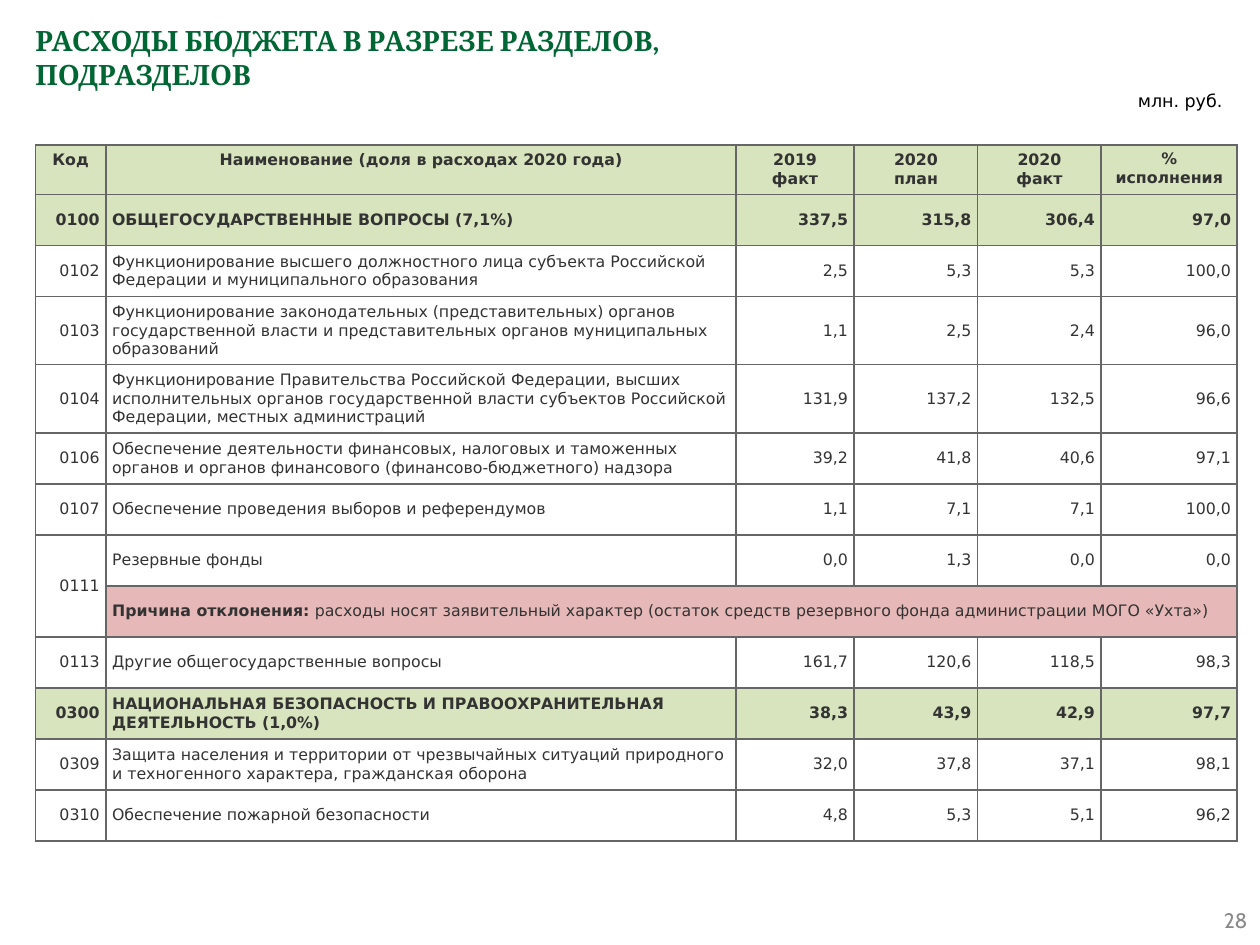
from lxml.etree import SubElement
from pptx import Presentation
from pptx.dml.color import RGBColor
from pptx.enum.shapes import MSO_SHAPE
from pptx.enum.text import MSO_ANCHOR as ANCHOR, MSO_AUTO_SIZE, PP_ALIGN as ALIGN
from pptx.oxml.ns import qn
from pptx.util import Inches, Pt

# Content
TITLE = "РАСХОДЫ БЮДЖЕТА В РАЗРЕЗЕ РАЗДЕЛОВ, ПОДРАЗДЕЛОВ"
UNITS = "млн. руб."
PAGE_NUMBER = "28"
HEADINGS = [
    ["Код"], ["Наименование (доля в расходах 2020 года)"],
    ["2019", "факт"], ["2020", "план"], ["2020", "факт"], ["%", "исполнения"],
]
EXPENSES = [
    ("0100", "ОБЩЕГОСУДАРСТВЕННЫЕ ВОПРОСЫ (7,1%)", "337,5", "315,8", "306,4", "97,0"),
    ("0102", "Функционирование высшего должностного лица субъекта Российской "
     "Федерации и муниципального образования", "2,5", "5,3", "5,3", "100,0"),
    ("0103", "Функционирование законодательных (представительных) органов "
     "государственной власти и представительных органов муниципальных "
     "образований", "1,1", "2,5", "2,4", "96,0"),
    ("0104", "Функционирование Правительства Российской Федерации, высших "
     "исполнительных органов государственной власти субъектов Российской "
     "Федерации, местных администраций", "131,9", "137,2", "132,5", "96,6"),
    ("0106", "Обеспечение деятельности финансовых, налоговых и таможенных "
     "органов и органов финансового (финансово-бюджетного) надзора",
     "39,2", "41,8", "40,6", "97,1"),
    ("0107", "Обеспечение проведения выборов и референдумов",
     "1,1", "7,1", "7,1", "100,0"),
    ("0111", "Резервные фонды", "0,0", "1,3", "0,0", "0,0"),
    ("0113", "Другие общегосударственные вопросы",
     "161,7", "120,6", "118,5", "98,3"),
    ("0300", "НАЦИОНАЛЬНАЯ БЕЗОПАСНОСТЬ И ПРАВООХРАНИТЕЛЬНАЯ ДЕЯТЕЛЬНОСТЬ (1,0%)",
     "38,3", "43,9", "42,9", "97,7"),
    ("0309", "Защита населения и территории от чрезвычайных ситуаций природного "
     "и техногенного характера, гражданская оборона",
     "32,0", "37,8", "37,1", "98,1"),
    ("0310", "Обеспечение пожарной безопасности", "4,8", "5,3", "5,1", "96,2"),
]
SECTIONS = {"0100", "0300"}
# Explanation placed under an expense line, as (text, bold) runs
REASONS = {
    "0111": [("Причина отклонения: ", True),
             ("расходы носят заявительный характер (остаток средств резервного "
              "фонда администрации МОГО «Ухта»)", False)],
}

# Style
GREEN = RGBColor(0x00, 0x66, 0x33)
INK = RGBColor(0x33, 0x33, 0x33)
BLACK = RGBColor(0x00, 0x00, 0x00)
GREY = RGBColor(0x89, 0x89, 0x89)
BORDER = RGBColor(0x66, 0x66, 0x66)
SECTION_FILL = RGBColor(0xD7, 0xE4, 0xBD)
REASON_FILL = RGBColor(0xE6, 0xB9, 0xB8)
WHITE = RGBColor(0xFF, 0xFF, 0xFF)
SANS = "DejaVu Sans"
COLUMN_WIDTHS = [0.56, 5, 0.94, 0.98, 0.98, 1.08]
HEADER_HEIGHT, BODY_HEIGHT = 0.3, 4.86


def add_run(paragraph, text, size, font, color, bold=False):
    run = paragraph.add_run()
    run.text = text
    run.font.size = Pt(size)
    run.font.name = font
    run.font.color.rgb = color
    run.font.bold = bold


def fill_cell(cell, paragraphs, align, fill, anchor=ANCHOR.MIDDLE, side=0.05, edge=0.05):
    """Write paragraphs of (text, bold) runs and set the cell's look."""
    frame = cell.text_frame
    for index, runs in enumerate(paragraphs):
        paragraph = frame.add_paragraph() if index else frame.paragraphs[0]
        paragraph.alignment = align
        for text, bold in runs:
            add_run(paragraph, text, 9, SANS, INK, bold)
    cell.vertical_anchor = anchor
    cell.margin_left = cell.margin_right = Inches(side)
    cell.margin_top = cell.margin_bottom = Inches(edge)
    cell.fill.solid()
    cell.fill.fore_color.rgb = fill


def add_borders(cell):
    properties = cell._tc.get_or_add_tcPr()
    for position, tag in enumerate(("a:lnL", "a:lnR", "a:lnT", "a:lnB")):
        line = SubElement(properties, qn(tag), w=str(Pt(1)))
        solid = SubElement(line, qn("a:solidFill"))
        SubElement(solid, qn("a:srgbClr"), val=str(BORDER))
        properties.insert(position, line)


def add_title(slide):
    title = slide.shapes.title
    title.left, title.top = Inches(0.18), Inches(0.14)
    title.width, title.height = Inches(6.02), Inches(1.15)
    frame = title.text_frame
    frame.word_wrap = True
    frame.auto_size = MSO_AUTO_SIZE.NONE
    frame.vertical_anchor = ANCHOR.TOP
    frame.paragraphs[0].alignment = ALIGN.LEFT
    add_run(frame.paragraphs[0], TITLE, 16, "Cambria", GREEN, True)


def add_expense_table(slide):
    row_count = 1 + len(EXPENSES) + len(REASONS)
    table = slide.shapes.add_table(
        row_count, len(HEADINGS), Inches(0.28), Inches(1.15),
        Inches(sum(COLUMN_WIDTHS)), Inches(HEADER_HEIGHT + BODY_HEIGHT)).table
    table.horz_banding = False
    for column, width in zip(table.columns, COLUMN_WIDTHS):
        column.width = Inches(width)
    for row in table.rows:
        row.height = Inches(BODY_HEIGHT / (row_count - 1))
    table.rows[0].height = Inches(HEADER_HEIGHT)

    # Header: the last heading has tighter margins
    last = len(HEADINGS) - 1
    for col, lines in enumerate(HEADINGS):
        side, edge = (0.02, 0.04) if col == last else (0.05, 0.05)
        fill_cell(table.cell(0, col), [[(line, True)] for line in lines],
                  ALIGN.CENTER, SECTION_FILL, ANCHOR.TOP, side, edge)

    # Expense lines, each with its explanation if there is one
    row = 1
    for expense in EXPENSES:
        code = expense[0]
        is_section = code in SECTIONS
        for col, text in enumerate(expense):
            fill_cell(table.cell(row, col), [[(text, is_section)]],
                      ALIGN.LEFT if col == 1 else ALIGN.RIGHT,
                      SECTION_FILL if is_section else WHITE)
        if code in REASONS:
            table.cell(row, 0).merge(table.cell(row + 1, 0))
            row += 1
            table.cell(row, 1).merge(table.cell(row, last))
            fill_cell(table.cell(row, 1), [REASONS[code]], ALIGN.LEFT, REASON_FILL)
        row += 1

    for cell in table.iter_cells():
        add_borders(cell)


def add_label(shape, text, size, font, color):
    frame = shape.text_frame
    frame.word_wrap = True
    frame.vertical_anchor = ANCHOR.MIDDLE
    frame.paragraphs[0].alignment = ALIGN.RIGHT
    add_run(frame.paragraphs[0], text, size, font, color)


def main():
    deck = Presentation()
    deck.slide_width, deck.slide_height = Inches(10), Inches(7.5)
    slide = deck.slides.add_slide(deck.slide_layouts[5])
    add_title(slide)
    add_expense_table(slide)

    # Units above the table
    units = slide.shapes.add_shape(
        MSO_SHAPE.PENTAGON, Inches(8.56), Inches(0.69), Inches(1.24), Inches(0.21))
    units.adjustments[0] = 0
    units.shadow.inherit = False
    units.fill.background()
    units.line.fill.background()
    add_label(units, UNITS, 10, SANS, BLACK)

    # Page number
    page = slide.shapes.add_textbox(Inches(7.67), Inches(7.1), Inches(2.33), Inches(0.4))
    add_label(page, PAGE_NUMBER, 12, "Cabin", GREY)

    deck.save("out.pptx")


if __name__ == "__main__":
    main()
